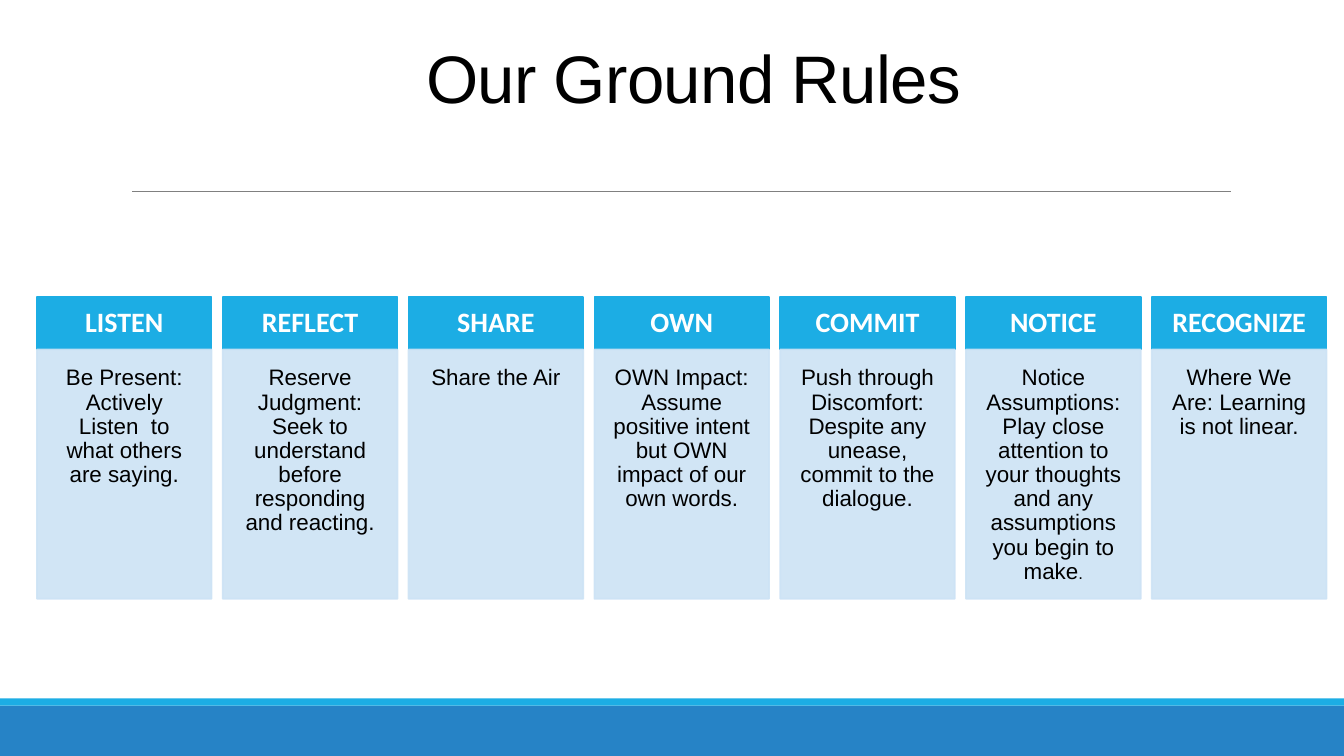
import lxml.etree
import pptx
import pptx.dml.color
import pptx.enum.shapes
import pptx.enum.text
import pptx.oxml.ns
import pptx.util

Cm = pptx.util.Cm
Pt = pptx.util.Pt
RGBColor = pptx.dml.color.RGBColor
Anchor = pptx.enum.text.MSO_ANCHOR
qn = pptx.oxml.ns.qn

BLUE = RGBColor(0x26, 0x83, 0xC6)
CYAN = RGBColor(0x1C, 0xAD, 0xE4)
PALE = RGBColor(0xCD, 0xE3, 0xF5)
GREY = RGBColor(0x80, 0x80, 0x80)
BLACK = RGBColor(0, 0, 0)
WHITE = RGBColor(0xFF, 0xFF, 0xFF)

RULES = [
    ("LISTEN", "Be Present: Actively Listen  to what others are saying.", ""),
    ("REFLECT", "Reserve Judgment: Seek to understand before responding and reacting.", ""),
    ("SHARE", "Share the Air", ""),
    ("OWN", "OWN Impact: Assume positive intent but OWN impact of our own words.", ""),
    ("COMMIT", "Push through Discomfort: Despite any unease, commit to the dialogue.", ""),
    ("NOTICE", "Notice Assumptions: Play close attention to your thoughts and any "
               "assumptions you begin to make", "."),
    ("RECOGNIZE", "Where We Are: Learning is not linear.", ""),
]


def add_span(para, text, size, font="Arial", color=BLACK, bold=False):
    span = para.add_run()
    span.text = text
    span.font.size = Pt(size)
    span.font.name = font
    span.font.color.rgb = color
    span.font.bold = bold


def format_frame(box, anchor, inset, spacing):
    frame = box.text_frame
    frame.word_wrap = True
    frame.auto_size = pptx.enum.text.MSO_AUTO_SIZE.NONE
    frame.vertical_anchor = anchor
    frame.margin_left = frame.margin_right = Cm(inset)
    frame.margin_top = frame.margin_bottom = Cm(inset)
    para = frame.paragraphs[0]
    para.alignment = pptx.enum.text.PP_ALIGN.CENTER
    para.line_spacing = spacing
    return para


def add_panel(page, left, top, width, height, fill, outlined=True):
    panel = page.shapes.add_shape(pptx.enum.shapes.MSO_SHAPE.RECTANGLE,
                                  Cm(left), Cm(top), Cm(width), Cm(height))
    panel.shadow.inherit = False
    panel.fill.solid()
    panel.fill.fore_color.rgb = fill
    if outlined:
        panel.line.color.rgb = fill
        panel.line.width = Pt(1.25)
    else:
        panel.line.fill.background()
    return panel


def set_opacity(panel, percent):
    for color in panel.element.spPr.iter(qn("a:srgbClr")):
        alpha = lxml.etree.SubElement(color, qn("a:alpha"))
        alpha.set("val", str(percent * 1000))


def add_heading(page, left, top, width, height):
    title = page.shapes.title
    title.left, title.top = Cm(left), Cm(top)
    title.width, title.height = Cm(width), Cm(height)
    para = format_frame(title, Anchor.BOTTOM, 0.13, 0.85)
    title.text_frame.margin_bottom = Cm(1.88)
    add_span(para, "Our Ground Rules", 48)
    for properties in title.element.iter(qn("a:rPr")):
        properties.set("spc", "-50")


def add_divider(page, left, top, width):
    divider = page.shapes.add_connector(pptx.enum.shapes.MSO_CONNECTOR.STRAIGHT,
                                        Cm(left), Cm(top), Cm(left + width), Cm(top))
    divider.line.color.rgb = GREY
    divider.line.width = Pt(0.5)
    lxml.etree.SubElement(divider.element.spPr, qn("a:effectLst"))


def add_footer_bands(page, top, width, height):
    accent_height = 0.18
    add_panel(page, 0, top + accent_height, width, height - accent_height, BLUE, outlined=False)
    add_panel(page, 0, top, width, accent_height, CYAN, outlined=False)


def add_rule_card(page, left, top, width, height, rule):
    heading, advice, ending = rule
    header_height = 1.32
    header = add_panel(page, left, top, width, header_height, CYAN)
    para = format_frame(header, Anchor.MIDDLE, 0.36, 0.9)
    add_span(para, heading, 20, font="Calibri", color=WHITE, bold=True)
    body = add_panel(page, left, top + header_height, width, height - header_height, PALE)
    set_opacity(body, 90)
    para = format_frame(body, Anchor.TOP, 0.43, 0.9)
    add_span(para, advice, 16)
    if ending:
        add_span(para, ending, 12)


def add_rule_cards(page, left, top, width, height):
    gap = 0.28
    card_width = (width - gap * (len(RULES) - 1)) / len(RULES)
    for index, rule in enumerate(RULES):
        add_rule_card(page, left + index * (card_width + gap), top, card_width, height, rule)


def main():
    deck = pptx.Presentation()
    deck.slide_width, deck.slide_height = Cm(33.87), Cm(19.05)
    page = deck.slides.add_slide(deck.slide_layouts[5])
    page.background.fill.solid()
    page.background.fill.fore_color.rgb = WHITE
    add_footer_bands(page, 17.6, 33.87, 1.45)
    add_divider(page, 3.33, 4.83, 27.68)
    add_heading(page, 8.05, 0.79, 18.85, 4.04)
    add_rule_cards(page, 0.93, 7.49, 32.5, 7.6)
    deck.save("out.pptx")


if __name__ == "__main__":
    main()
